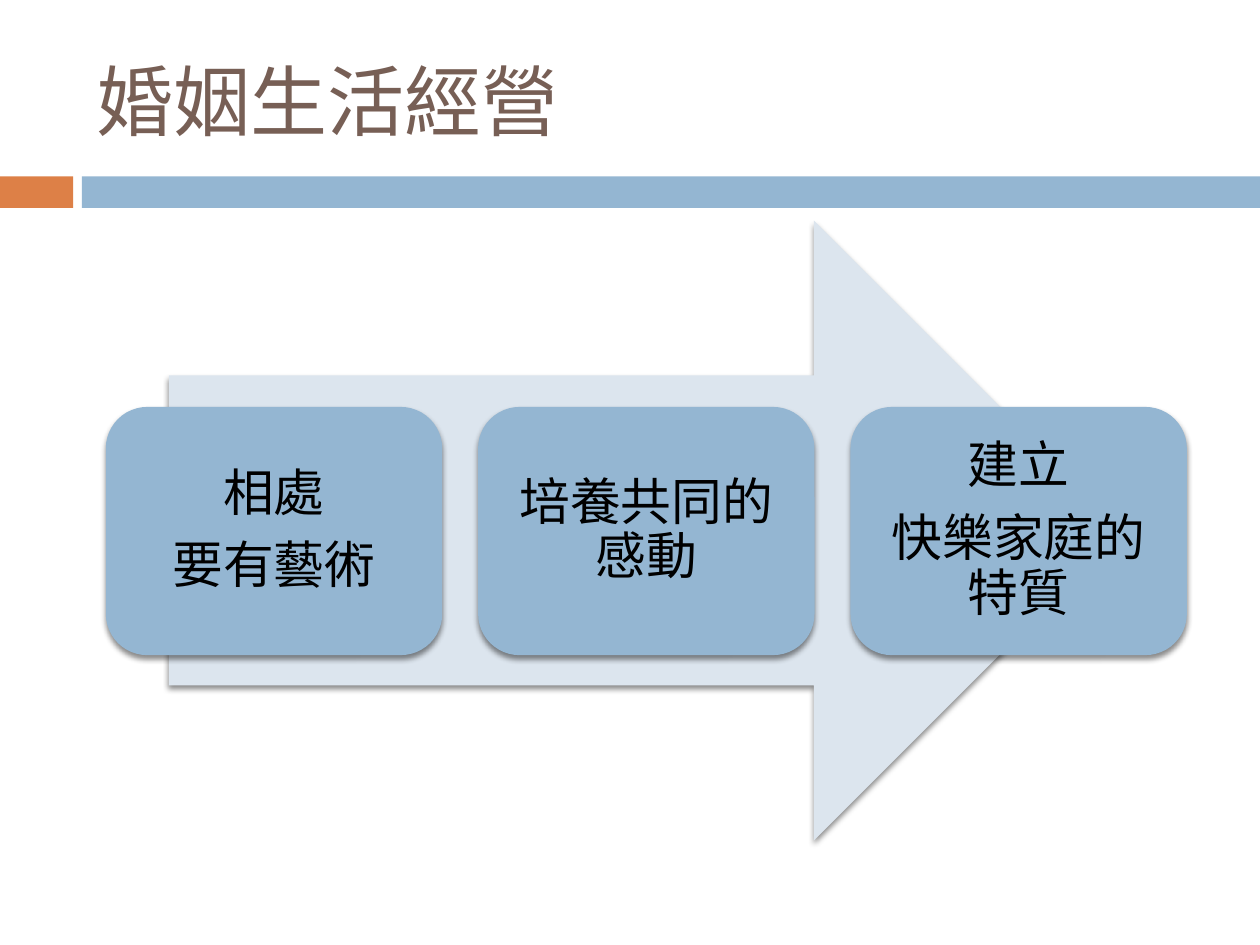
from dataclasses import dataclass

from lxml import etree
from pptx import Presentation
from pptx.dml.color import RGBColor
from pptx.enum.shapes import MSO_SHAPE as Kind
from pptx.enum.text import MSO_ANCHOR as Anchor, PP_ALIGN as Align
from pptx.oxml.ns import qn
from pptx.util import Inches, Pt

BLUE, PALE, ORANGE = "94B6D2", "DCE5EE", "DD8047"
BROWN, BLACK = "775F55", "000000"


@dataclass
class Box:
    left: float
    top: float
    width: float
    height: float

    def lengths(self) -> list:
        return [Inches(n) for n in (self.left, self.top, self.width, self.height)]


def color(code: str) -> RGBColor:
    return RGBColor.from_string(code)


def add_shadow(shape) -> None:
    """Give a shape a soft shadow straight below it."""
    effects = shape._element.spPr.find(qn("a:effectLst"))
    outer = etree.SubElement(effects, qn("a:outerShdw"), blurRad=str(Pt(3)),
                             dist=str(Pt(2.4)), dir="5400000", rotWithShape="0")
    tint = etree.SubElement(outer, qn("a:srgbClr"), val=BLACK)
    etree.SubElement(tint, qn("a:alpha"), val="45000")


def draw(slide, kind: Kind, box: Box, fill: str, shadow: bool = False):
    shape = slide.shapes.add_shape(kind, *box.lengths())
    shape.fill.solid()
    shape.fill.fore_color.rgb = color(fill)
    shape.line.fill.background()
    shape.shadow.inherit = False
    if shadow:
        add_shadow(shape)
    return shape


def write(shape, text: str, *, size: float, ink: str, align: Align = Align.LEFT,
          inset: float | None = None, line: float = 1.0, after: float = 0) -> None:
    frame = shape.text_frame
    frame.word_wrap = True
    frame.vertical_anchor = Anchor.MIDDLE
    if inset is not None:
        frame.margin_left = frame.margin_right = Inches(inset)
        frame.margin_top = frame.margin_bottom = Inches(inset)
    frame.text = text
    for par in frame.paragraphs:
        par.alignment = align
        par.line_spacing = line
        par.space_after = Pt(after)
        for run in par.runs:
            run.font.name = "Calibri"
            run.font.size = Pt(size)
            run.font.color.rgb = color(ink)


def main() -> None:
    deck = Presentation()
    deck.slide_width, deck.slide_height = Inches(10), Inches(7.5)
    slide = deck.slides.add_slide(deck.slide_layouts[6])

    # Header bars and title
    draw(slide, Kind.RECTANGLE, Box(0, 1.4, 0.58, 0.25), ORANGE)
    draw(slide, Kind.RECTANGLE, Box(0.65, 1.4, 9.35, 0.25), BLUE)
    title = slide.shapes.add_textbox(*Box(0.67, 0.25, 8.92, 1.08).lengths())
    write(title, "婚姻生活經營", size=44, ink=BROWN)

    # Arrow behind the steps
    draw(slide, Kind.RIGHT_ARROW, Box(1.34, 1.75, 7.58, 4.92), PALE, shadow=True)

    # Three evenly spaced steps
    left, wide, gap = 0.84, 2.67, 0.285
    steps = ("相處\n要有藝術", "培養共同的感動", "建立\n快樂家庭的特質")
    for i, text in enumerate(steps):
        box = Box(left + i * (wide + gap), 3.23, wide, 1.97)
        card = draw(slide, Kind.ROUNDED_RECTANGLE, box, BLUE, shadow=True)
        write(card, text, size=29, ink=BLACK, align=Align.CENTER,
              inset=0.12, line=0.9, after=10)

    deck.save("out.pptx")


if __name__ == "__main__":
    main()
